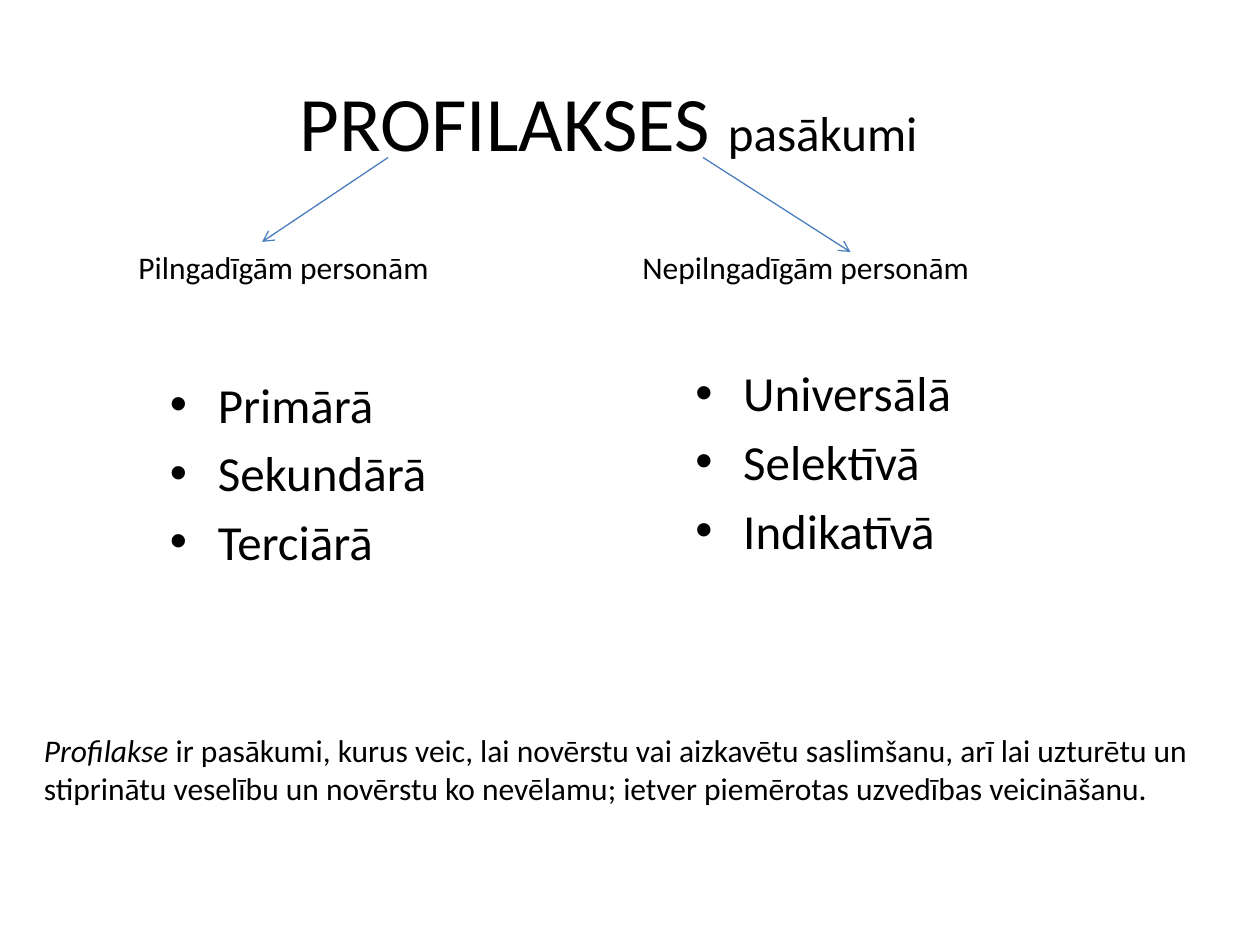
from lxml.etree import SubElement
from pptx import Presentation
from pptx.dml.color import RGBColor
from pptx.enum.shapes import MSO_CONNECTOR
from pptx.enum.text import MSO_ANCHOR, PP_ALIGN
from pptx.oxml.ns import qn
from pptx.util import Inches, Pt

BLACK = RGBColor(0x00, 0x00, 0x00)
BLUE = RGBColor(0x4B, 0x7E, 0xBC)
FONT = "Calibri"

TITLE = [[("PROFILAKSES ", 44, False), ("pasākumi", 28, False)]]
GROUPS = [[("Pilngadīgām personām\tNepilngadīgām personām", 18, False)]]
DEFINITION = [[
    ("Profilakse ", 18, True),
    ("ir pasākumi, kurus veic, lai novērstu vai aizkavētu saslimšanu, arī lai uzturētu un "
     "stiprinātu veselību un novērstu ko nevēlamu; ietver piemērotas uzvedības veicināšanu.", 18, False),
]]
LISTS = [
    ((1.25, 2.92, 4.42, 4.37), ["Primārā", "Sekundārā", "Terciārā"]),
    ((5.42, 2.83, 4.42, 4.37), ["Universālā", "Selektīvā", "Indikatīvā"]),
]
ARROWS = [((3.08, 1.25), (2.08, 1.92)), ((5.58, 1.25), (6.75, 2))]


def add_text(slide, box, paragraphs, align=PP_ALIGN.LEFT, anchor=MSO_ANCHOR.TOP,
             bullet=False, tab=None, gap=0):
    shape = slide.shapes.add_textbox(*map(Inches, box))
    frame = shape.text_frame
    frame.word_wrap = True
    frame.vertical_anchor = anchor
    for index, runs in enumerate(paragraphs):
        paragraph = frame.add_paragraph() if index else frame.paragraphs[0]
        paragraph.alignment = align
        if index and gap:
            paragraph.space_before = Pt(gap)
        properties = paragraph._p.get_or_add_pPr()
        if bullet:
            properties.set("marL", str(Inches(0.38)))
            properties.set("indent", str(-Inches(0.38)))
            SubElement(properties, qn("a:buFont"), typeface="Arial")
            SubElement(properties, qn("a:buChar"), char="•")
        if tab:
            tabs = SubElement(properties, qn("a:tabLst"))
            SubElement(tabs, qn("a:tab"), pos=str(Inches(tab)), algn="l")
        for text, size, italic in runs:
            run = paragraph.add_run()
            run.text = text
            run.font.name = FONT
            run.font.size = Pt(size)
            run.font.italic = italic
            run.font.color.rgb = BLACK


def add_arrow(slide, start, end):
    connector = slide.shapes.add_connector(
        MSO_CONNECTOR.STRAIGHT, *map(Inches, start + end))
    connector.line.color.rgb = BLUE
    connector.line.width = Pt(0.75)
    SubElement(connector.line._get_or_add_ln(), qn("a:tailEnd"), type="arrow")
    SubElement(connector._element.spPr, qn("a:effectLst"))


def main():
    presentation = Presentation()
    presentation.slide_width = Inches(10)
    presentation.slide_height = Inches(7.5)
    slide = presentation.slides.add_slide(presentation.slide_layouts[6])

    add_text(slide, (0.33, 0.33, 9, 1.25), TITLE,
             align=PP_ALIGN.CENTER, anchor=MSO_ANCHOR.MIDDLE)
    for box, items in LISTS:
        add_text(slide, box, [[(item, 28, False)] for item in items], bullet=True, gap=5.6)
    add_text(slide, (1, 1.92, 8.08, 0.4), GROUPS, tab=4)
    for start, end in ARROWS:
        add_arrow(slide, start, end)
    add_text(slide, (0.25, 5.75, 9.58, 0.71), DEFINITION)

    presentation.save("out.pptx")


if __name__ == "__main__":
    main()
